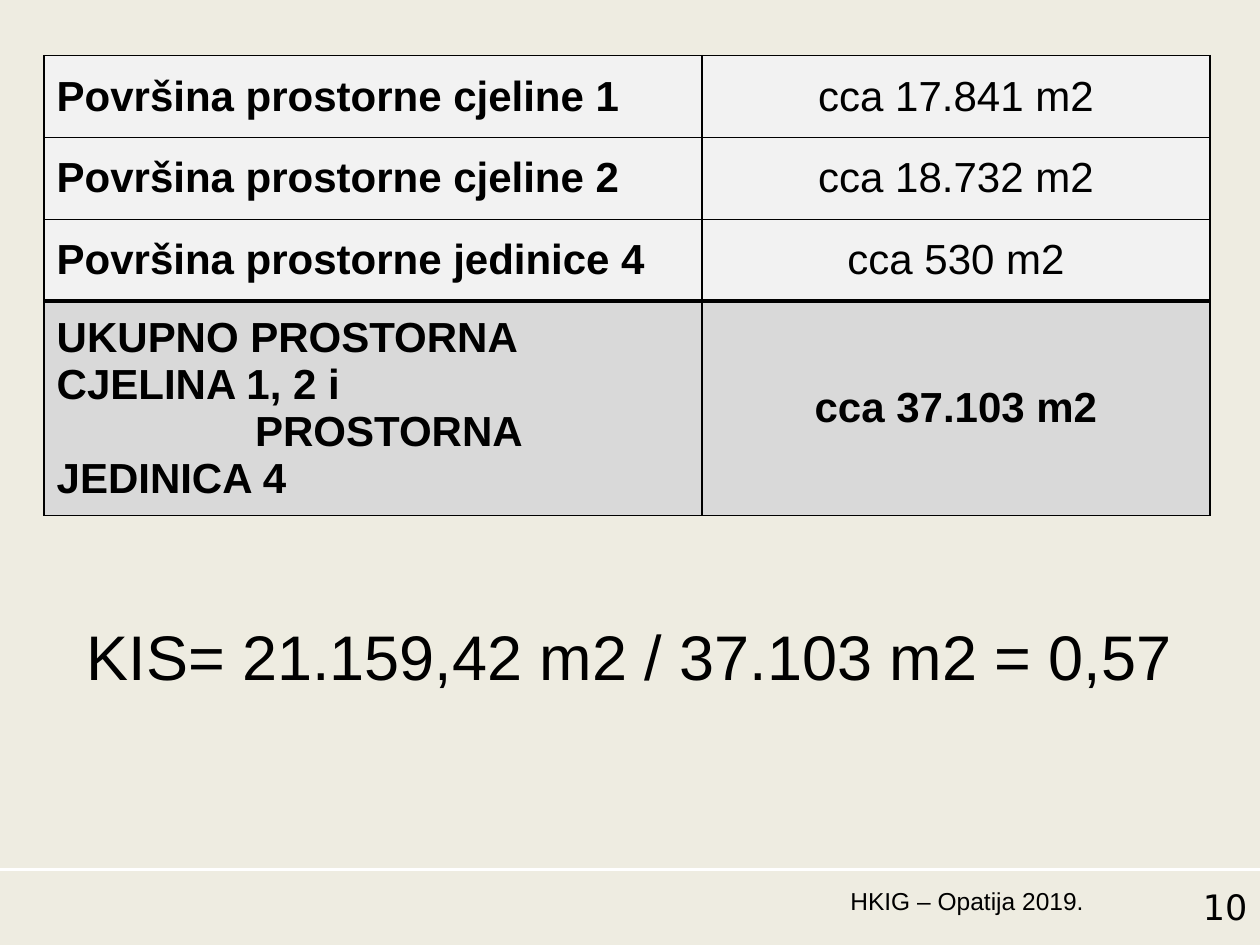
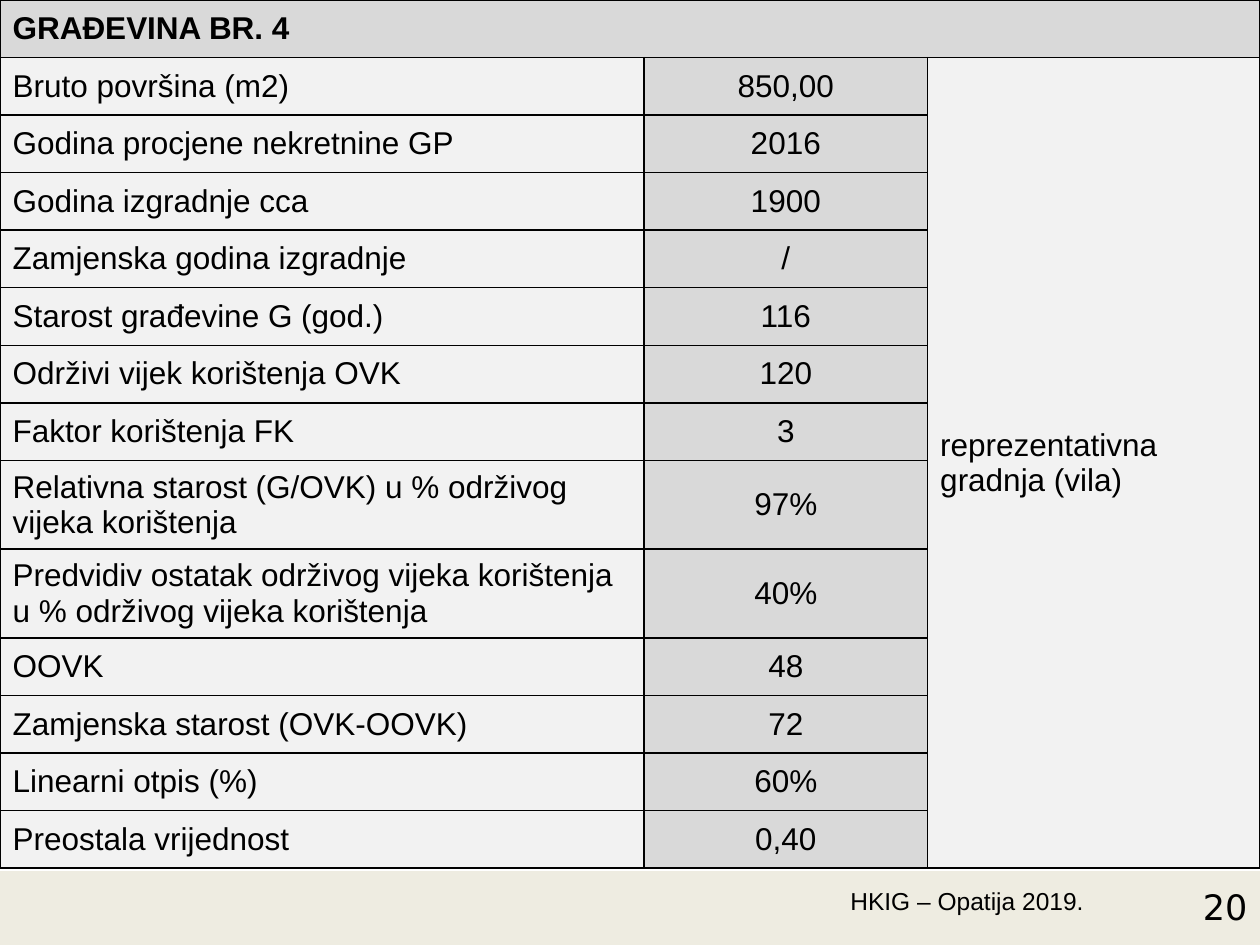
from lxml import etree
from pptx import Presentation
from pptx.dml.color import RGBColor
from pptx.enum.shapes import MSO_CONNECTOR
from pptx.enum.text import MSO_ANCHOR, PP_ALIGN
from pptx.oxml.ns import qn
from pptx.util import Cm, Pt

BLACK = RGBColor(0x00, 0x00, 0x00)
WHITE = RGBColor(0xFF, 0xFF, 0xFF)
CREAM = RGBColor(0xEE, 0xEC, 0xE1)
LIGHT = RGBColor(0xF2, 0xF2, 0xF2)
GREY = RGBColor(0xD9, 0xD9, 0xD9)

FONT = "Arial"
NUMBER_FONT = "DejaVu Sans"
SLIDE_W, SLIDE_H = Cm(25.4), Cm(19.05)
FOOTER_LINE_Y = Cm(17.53)
FOOTER_Y, FOOTER_H = Cm(17.73), Cm(1.32)
THIN, THICK = 1, 2.25

AREAS = [
    ("Površina prostorne cjeline 1", "cca 17.841 m2"),
    ("Površina prostorne cjeline 2", "cca 18.732 m2"),
    ("Površina prostorne jedinice 4", "cca 530 m2"),
    ("UKUPNO PROSTORNA CJELINA 1, 2 i\nPROSTORNA JEDINICA 4", "cca 37.103 m2"),
]
BUILDING = [
    ("Bruto površina (m2)", "850,00"),
    ("Godina procjene nekretnine GP", "2016"),
    ("Godina izgradnje cca", "1900"),
    ("Zamjenska godina izgradnje", "/"),
    ("Starost građevine G (god.)", "116"),
    ("Održivi vijek korištenja OVK", "120"),
    ("Faktor korištenja FK", "3"),
    ("Relativna starost (G/OVK) u % održivog vijeka korištenja", "97%"),
    ("Predvidiv ostatak održivog vijeka korištenja u % održivog vijeka korištenja", "40%"),
    ("OOVK", "48"),
    ("Zamjenska starost (OVK-OOVK)", "72"),
    ("Linearni otpis (%)", "60%"),
    ("Preostala vrijednost", "0,40"),
]
TWO_LINE_ROWS = (8, 9)


def write(tf, text, size=18, bold=False, align=PP_ALIGN.LEFT, font=FONT, color=BLACK):
    """Write one paragraph per line of text."""
    tf.word_wrap = True
    for i, line in enumerate(text.split("\n")):
        p = tf.paragraphs[0] if i == 0 else tf.add_paragraph()
        p.alignment = align
        r = p.add_run()
        r.text = line
        r.font.name, r.font.size, r.font.bold = font, Pt(size), bold
        r.font.color.rgb = color


def add_text(s, text, left, top, width, height, **fmt):
    sp = s.shapes.add_textbox(left, top, width, height)
    write(sp.text_frame, text, **fmt)


def set_borders(cell, top=THIN, bottom=THIN):
    widths = {"a:lnL": THIN, "a:lnR": THIN, "a:lnT": top, "a:lnB": bottom}
    tcPr = cell._tc.get_or_add_tcPr()
    for i, (tag, width) in enumerate(widths.items()):
        ln = etree.Element(qn(tag), w=str(Pt(width)))
        fill = etree.SubElement(ln, qn("a:solidFill"))
        etree.SubElement(fill, qn("a:srgbClr"), val=str(BLACK))
        tcPr.insert(i, ln)


def fill_cell(cell, text, fill, **fmt):
    cell.fill.solid()
    cell.fill.fore_color.rgb = fill
    cell.vertical_anchor = MSO_ANCHOR.MIDDLE
    write(cell.text_frame, text, **fmt)


def add_table(s, left, top, col_widths, row_heights):
    """Add an unstyled table; all measures are in centimetres."""
    table = s.shapes.add_table(
        len(row_heights), len(col_widths), Cm(left), Cm(top),
        Cm(sum(col_widths)), Cm(sum(row_heights))).table
    table.first_row = table.horz_banding = False
    for col, width in zip(table.columns, col_widths):
        col.width = Cm(width)
    for row, height in zip(table.rows, row_heights):
        row.height = Cm(height)
    return table


def add_slide(prs, number):
    """Add a slide with the footer line, event name and page number."""
    s = prs.slides.add_slide(prs.slide_layouts[6])
    line = s.shapes.add_connector(
        MSO_CONNECTOR.STRAIGHT, 0, FOOTER_LINE_Y, SLIDE_W, FOOTER_LINE_Y)
    line.line.color.rgb = WHITE
    line.line.width = Pt(1.5)
    etree.SubElement(line._element.spPr, qn("a:effectLst"))
    add_text(s, "HKIG – Opatija 2019.", Cm(16.69), FOOTER_Y, Cm(5.41), FOOTER_H,
             size=14, align=PP_ALIGN.RIGHT)
    add_text(s, str(number), Cm(22.3), FOOTER_Y, Cm(3.1), FOOTER_H,
             size=20, align=PP_ALIGN.RIGHT, font=NUMBER_FONT)
    return s


def areas_slide(prs):
    s = add_slide(prs, 10)
    table = add_table(s, 0.89, 1.12, [13.26, 10.24], [1.65] * 3 + [4.09])
    total = len(AREAS) - 1
    for i, (label, area) in enumerate(AREAS):
        fill = GREY if i == total else LIGHT
        fill_cell(table.cell(i, 0), label, fill, size=24, bold=True)
        fill_cell(table.cell(i, 1), area, fill, size=24, bold=i == total,
                  align=PP_ALIGN.CENTER)
        for cell in table.rows[i].cells:
            set_borders(cell, top=THICK if i == total else THIN,
                        bottom=THICK if i == total - 1 else THIN)

    # Second line of the total starts further in
    pPr = table.cell(total, 0).text_frame.paragraphs[1]._p.get_or_add_pPr()
    pPr.set("marL", "0")
    pPr.set("indent", str(Cm(4)))

    add_text(s, "KIS= 21.159,42 m2 / 37.103 m2 = 0,57",
             Cm(1.5), Cm(12.32), Cm(22.81), Cm(1.8), size=36)


def building_slide(prs):
    s = add_slide(prs, 20)
    last = len(BUILDING)
    heights = [1.79 if i in TWO_LINE_ROWS else 1.16 for i in range(last + 1)]
    table = add_table(s, 0, 0, [12.98, 5.72, 6.7], heights)

    # Heading across the table, building type down the right side
    table.cell(0, 0).merge(table.cell(0, 2))
    table.cell(1, 2).merge(table.cell(last, 2))
    fill_cell(table.cell(0, 0), "GRAĐEVINA BR. 4", GREY, bold=True)
    fill_cell(table.cell(1, 2), "reprezentativna gradnja (vila)", LIGHT)

    for i, (label, value) in enumerate(BUILDING, start=1):
        fill_cell(table.cell(i, 0), label, LIGHT)
        fill_cell(table.cell(i, 1), value, GREY, align=PP_ALIGN.CENTER)
    for cell in table.iter_cells():
        set_borders(cell)


def main():
    prs = Presentation()
    prs.slide_width, prs.slide_height = SLIDE_W, SLIDE_H
    background = prs.slide_master.background.fill
    background.solid()
    background.fore_color.rgb = CREAM
    areas_slide(prs)
    building_slide(prs)
    prs.save("out.pptx")


if __name__ == "__main__":
    main()
